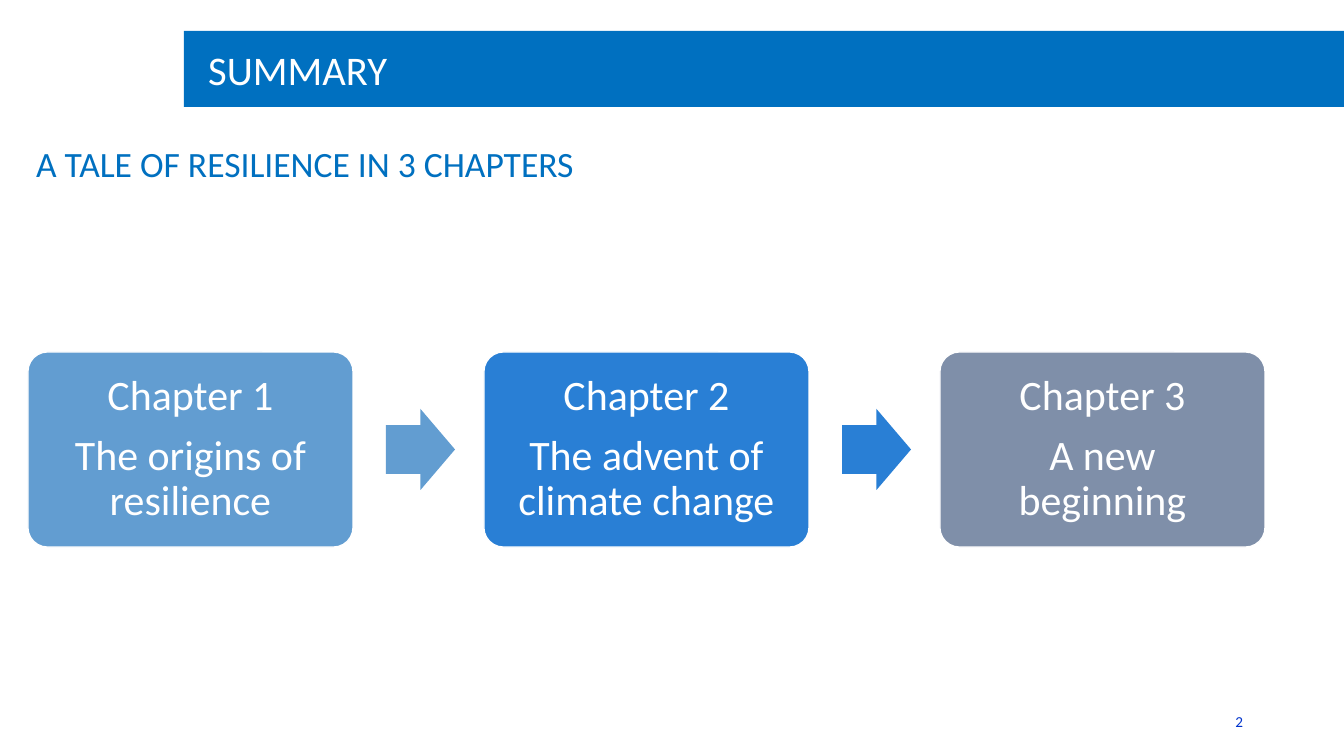
from pptx import Presentation
from pptx.dml.color import RGBColor
from pptx.enum.shapes import MSO_SHAPE
from pptx.enum.text import MSO_ANCHOR, MSO_AUTO_SIZE, PP_ALIGN
from pptx.util import Pt

PX = 10000
FONT = "Calibri"
RECT, ROUNDED, ARROW = MSO_SHAPE.RECTANGLE, MSO_SHAPE.ROUNDED_RECTANGLE, MSO_SHAPE.RIGHT_ARROW
LEFT, CENTER, RIGHT = PP_ALIGN.LEFT, PP_ALIGN.CENTER, PP_ALIGN.RIGHT
TOP, MIDDLE = MSO_ANCHOR.TOP, MSO_ANCHOR.MIDDLE
NO_FIT = MSO_AUTO_SIZE.NONE

COLORS = {
    "white": "FFFFFF",
    "banner": "0070C0",
    "number": "0033CC",
    "origins": "629DD1",
    "advent": "297FD5",
    "beginning": "7F8FA9",
}
CHAPTERS = [
    ("Chapter 1", "The origins of resilience", "origins"),
    ("Chapter 2", "The advent of climate change", "advent"),
    ("Chapter 3", "A new beginning", "beginning"),
]
CHAPTER_LEFT, CHAPTER_STEP, ARROW_OFFSET = 28, 456, 358


def rgb(name):
    """Return the named colour."""
    return RGBColor.from_string(COLORS[name])


def box(x, y, w, h):
    """Turn a pixel box into EMU."""
    return [v * PX for v in (x, y, w, h)]


def place(sp, x, y, w, h):
    """Move and size a placeholder in pixels."""
    sp.left, sp.top, sp.width, sp.height = box(x, y, w, h)


def write(sp, *lines, size, color="white", align=LEFT, anchor=MIDDLE, spacing=0.9, gap=0, inset=None):
    """Fill a shape with one formatted paragraph per line."""
    tf = sp.text_frame
    tf.word_wrap = True
    tf.auto_size = NO_FIT
    tf.vertical_anchor = anchor
    if inset is not None:
        tf.margin_left = tf.margin_right = tf.margin_top = tf.margin_bottom = inset * PX
    for i, line in enumerate(lines):
        p = tf.add_paragraph() if i else tf.paragraphs[0]
        p.alignment = align
        p.line_spacing = spacing
        p.space_before = Pt(gap if i else 0)
        r = p.add_run()
        r.text = line
        r.font.name = FONT
        r.font.size = Pt(size)
        r.font.bold = False
        r.font.color.rgb = rgb(color)


def add_block(s, kind, bounds, color, adjustments=(), outline=None):
    """Add a flat filled shape."""
    sp = s.shapes.add_shape(kind, *box(*bounds))
    sp.shadow.inherit = False
    sp.fill.solid()
    sp.fill.fore_color.rgb = rgb(color)
    for i, value in enumerate(adjustments):
        sp.adjustments[i] = value
    if outline:
        sp.line.color.rgb = rgb(outline)
        sp.line.width = Pt(1)
    else:
        sp.line.fill.background()
    return sp


def add_header(s):
    """Add the banner behind the title, and the subtitle."""
    banner = add_block(s, RECT, (184, 31, 1160, 76), "banner")
    s.shapes._spTree.insert(2, banner._element)
    title, subtitle = s.shapes.title, s.placeholders[1]
    place(title, 199, 45, 983, 55)
    write(title, "SUMMARY", size=32)
    place(subtitle, 27, 142, 1056, 52)
    write(subtitle, "A TALE OF RESILIENCE IN 3 CHAPTERS", size=28, color="banner", anchor=TOP)


def add_chapters(s):
    """Add the chapter boxes with an arrow between neighbours."""
    for i, (name, topic, color) in enumerate(CHAPTERS):
        x = CHAPTER_LEFT + i * CHAPTER_STEP
        sp = add_block(s, ROUNDED, (x, 352, 325, 195), color, [0.1], "white")
        write(sp, name, topic, size=33, align=CENTER, gap=11.5, inset=18)
        if i < len(CHAPTERS) - 1:
            add_block(s, ARROW, (x + ARROW_OFFSET, 409, 69, 81), color, [0.6, 0.5])


def add_page_number(s, number):
    """Add the page number at the bottom right."""
    sp = s.shapes.add_textbox(*box(949, 701, 303, 40))
    write(sp, number, size=12, color="number", align=RIGHT, spacing=1.0)


def main():
    """Build the summary slide."""
    prs = Presentation()
    prs.slide_width, prs.slide_height = 1344 * PX, 756 * PX
    s = prs.slides.add_slide(prs.slide_layouts[0])
    add_header(s)
    add_chapters(s)
    add_page_number(s, "2")
    prs.save("out.pptx")


if __name__ == "__main__":
    main()
